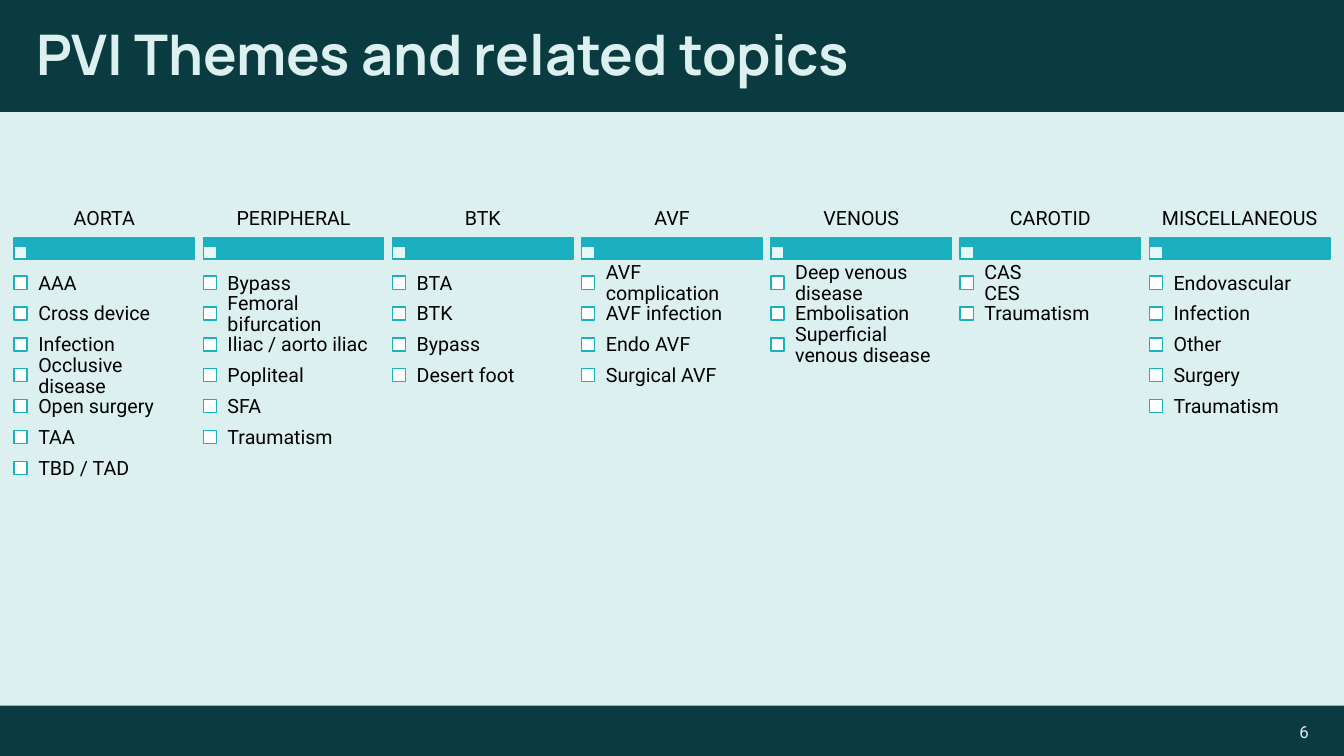
from copy import deepcopy
from dataclasses import dataclass

from pptx import Presentation
from pptx.dml.color import RGBColor
from pptx.enum.shapes import MSO_SHAPE
from pptx.enum.text import MSO_ANCHOR, PP_ALIGN
from pptx.oxml import parse_xml
from pptx.oxml.ns import nsdecls, qn
from pptx.shapes.shapetree import GroupShapes, SlideShapes
from pptx.util import Inches, Pt

Shapes = SlideShapes | GroupShapes

PALE = RGBColor(0xDC, 0xF0, 0xEF)
DARK = RGBColor(0x09, 0x3B, 0x40)
TEAL = RGBColor(0x1B, 0xB0, 0xBF)
WHITE = RGBColor(0xFF, 0xFF, 0xFF)
BLACK = RGBColor(0x00, 0x00, 0x00)

SLIDE_W, SLIDE_H = 13.33, 7.5

# Grid of themes, in inches
FIRST_X, LAST_X = 0.14, 11.4
COLUMN_W = 1.79
HEADING_Y, HEADING_H = 1.98, 0.38
BAR_Y, BAR_H = 2.36, 0.21
BOX = 0.13
TOPIC_Y, TOPIC_H, TOPIC_STEP = 2.66, 0.31, 0.306
BOX_DROP = 0.08


@dataclass(frozen=True)
class Theme:
    name: str
    topics: tuple[str, ...]


THEMES = (
    Theme("AORTA", ("AAA", "Cross device", "Infection", "Occlusive disease",
                    "Open surgery", "TAA", "TBD / TAD")),
    Theme("PERIPHERAL", ("Bypass", "Femoral bifurcation", "Iliac / aorto iliac",
                         "Popliteal", "SFA", "Traumatism")),
    Theme("BTK", ("BTA", "BTK", "Bypass", "Desert foot")),
    Theme("AVF", ("AVF complication", "AVF infection", "Endo AVF", "Surgical AVF")),
    Theme("VENOUS", ("Deep venous disease", "Embolisation",
                     "Superficial venous disease")),
    Theme("CAROTID", ("CAS\vCES", "Traumatism")),
    Theme("MISCELLANEOUS", ("Endovascular", "Infection", "Other", "Surgery",
                            "Traumatism")),
)


def add_rect(shapes: Shapes, x: float, y: float, w: float, h: float,
             fill: RGBColor, line: RGBColor | None = None,
             opacity: int = 100) -> None:
    sp = shapes.add_shape(MSO_SHAPE.RECTANGLE, Inches(x), Inches(y),
                          Inches(w), Inches(h))
    sp.shadow.inherit = False
    sp.fill.solid()
    sp.fill.fore_color.rgb = fill
    if opacity < 100:
        color = sp.fill._xPr.find(qn("a:solidFill"))[0]
        color.append(parse_xml(f'<a:alpha {nsdecls("a")} val="{opacity * 1000}"/>'))
    if line is None:
        sp.line.fill.background()
    else:
        sp.line.color.rgb = line
        sp.line.width = Pt(1)


def add_text(shapes: Shapes, text: str, x: float, y: float, w: float, h: float, *,
             size: int = 14, font: str = "Roboto", color: RGBColor = BLACK,
             bold: bool = False, align: PP_ALIGN = PP_ALIGN.LEFT,
             inset: tuple[float, float] = (0.1, 0.05), spacing: float = 0.9) -> None:
    tf = shapes.add_textbox(Inches(x), Inches(y), Inches(w), Inches(h)).text_frame
    tf.word_wrap = True
    tf.vertical_anchor = MSO_ANCHOR.MIDDLE
    tf.margin_left = tf.margin_right = Inches(inset[0])
    tf.margin_top = tf.margin_bottom = Inches(inset[1])
    p = tf.paragraphs[0]
    p.text = text
    p.alignment = align
    p.line_spacing = spacing
    for r in p.runs:
        r.font.size = Pt(size)
        r.font.name = font
        r.font.bold = bold
        r.font.color.rgb = color
    # Line breaks take the same size as the text around them
    for br in p._p.findall(qn("a:br")):
        br.append(deepcopy(p.runs[0]._r.rPr))


def add_theme(shapes: Shapes, theme: Theme, x: float) -> None:
    add_rect(shapes, x, BAR_Y, COLUMN_W, BAR_H, TEAL, TEAL)
    add_rect(shapes, x, BAR_Y + BAR_H - BOX, BOX, BOX, WHITE, TEAL, opacity=90)
    add_text(shapes, theme.name, x, HEADING_Y, COLUMN_W, HEADING_H,
             align=PP_ALIGN.CENTER, inset=(0.03, 0.02))
    for row, topic in enumerate(theme.topics):
        y = TOPIC_Y + row * TOPIC_STEP
        add_rect(shapes, x, y + BOX_DROP, BOX, BOX, WHITE, TEAL)
        add_text(shapes, topic, x + BOX, y, COLUMN_W - BOX, TOPIC_H,
                 inset=(0.11, 0.11))


def main() -> None:
    prs = Presentation()
    prs.slide_width, prs.slide_height = Inches(SLIDE_W), Inches(SLIDE_H)
    s = prs.slides.add_slide(prs.slide_layouts[6])
    s.background.fill.solid()
    s.background.fill.fore_color.rgb = PALE

    # Footer and header bands
    add_rect(s.shapes, 0, 7, SLIDE_W, 0.5, DARK)
    add_rect(s.shapes, 0, 0, SLIDE_W, 1.11, DARK)

    # Title and page number
    add_text(s.shapes, "PVI Themes and related topics", 0.26, 0.15, 12.81, 0.83,
             size=40, font="Manrope", color=PALE, bold=True)
    add_text(s.shapes, "6", 9.42, 7.1, 3.66, 0.31, size=12, color=PALE,
             align=PP_ALIGN.RIGHT, spacing=1.0)

    # Themes with their topics
    step = (LAST_X - FIRST_X) / (len(THEMES) - 1)
    group = s.shapes.add_group_shape()
    for column, theme in enumerate(THEMES):
        add_theme(group.shapes, theme, FIRST_X + column * step)

    prs.save("out.pptx")


if __name__ == "__main__":
    main()
